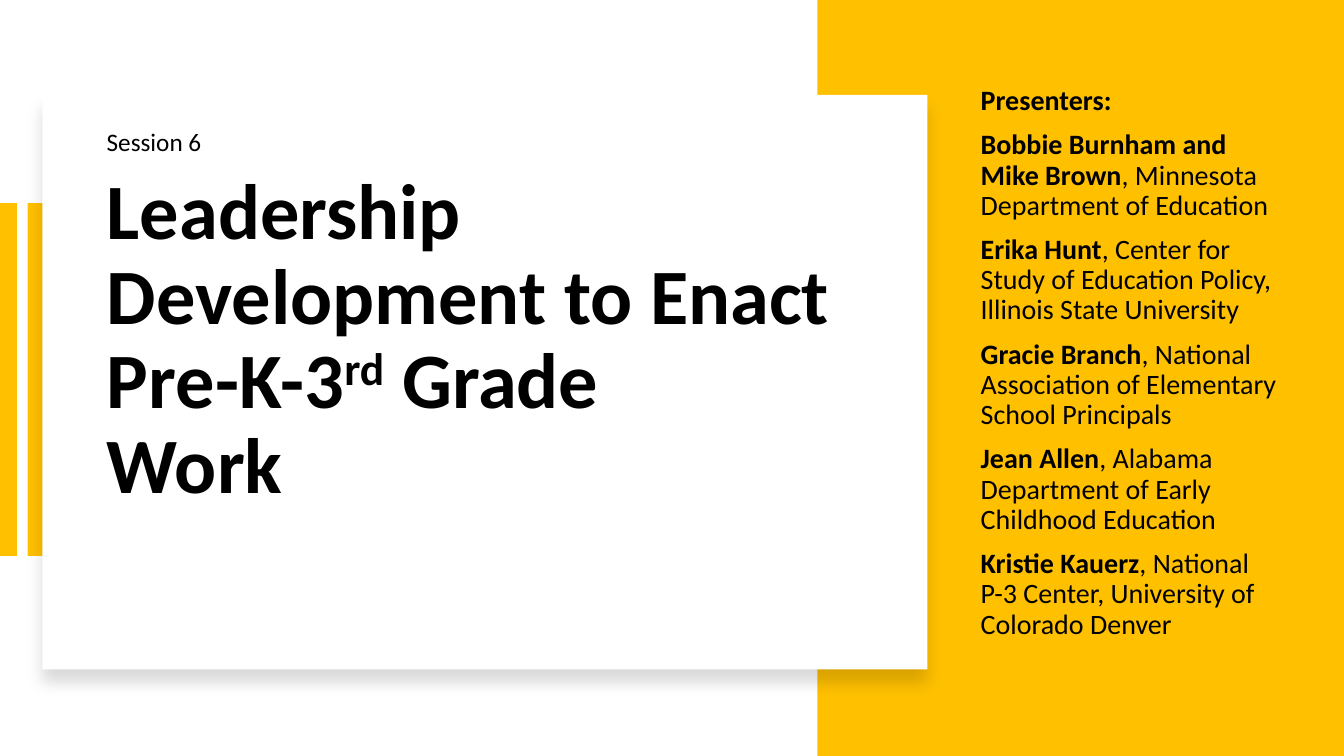
from dataclasses import dataclass

from lxml import etree
from pptx import Presentation
from pptx import util as u
from pptx.dml.color import RGBColor
from pptx.enum import text
from pptx.enum import shapes
from pptx.oxml.ns import qn


@dataclass(frozen=True)
class Theme:
    """Colours, font and type sizes of the slide."""
    accent: str = "FFC000"
    paper: str = "FFFFFF"
    ink: str = "000000"
    font: str = "Calibri"
    title_size: int = 56
    body_size: int = 20
    label_size: int = 18


class SlideBuilder:
    """Draws styled elements on one slide."""

    def __init__(self, slide, theme):
        """Keep the slide and its theme."""
        self.slide = slide
        self.theme = theme

    def apply(self, target, values):
        """Set every attribute named in values."""
        for name, value in values.items():
            setattr(target, name, value)

    def place(self, element, left, top, width, height):
        """Position an element, in centimetres, in front of the others."""
        sides = dict(left=left, top=top, width=width, height=height)
        self.apply(element, {side: u.Cm(length) for side, length in sides.items()})
        self.slide.shapes._spTree.append(element._element)

    def rectangle(self, box, colour):
        """Add a plain filled rectangle."""
        block = self.slide.shapes.add_shape(
            shapes.MSO_SHAPE.RECTANGLE, *(u.Cm(length) for length in box))
        block.fill.solid()
        block.fill.fore_color.rgb = RGBColor.from_string(colour)
        block.line.fill.background()
        block.shadow.inherit = False
        return block

    def card(self, box):
        """Add a white rectangle with a soft shadow below it."""
        panel = self.rectangle(box, self.theme.paper)
        effects = panel._element.spPr.find(qn("a:effectLst"))
        shadow = etree.SubElement(
            effects, qn("a:outerShdw"), blurRad=str(u.Pt(11)), dist=str(u.Pt(10)),
            dir="5400000", algn="t", rotWithShape="0")
        tint = etree.SubElement(shadow, qn("a:srgbClr"), val=self.theme.ink)
        etree.SubElement(tint, qn("a:alpha"), val="15000")

    def run(self, paragraph, words, size, bold=False, raised=0):
        """Add a styled run, raised by a percentage if asked."""
        piece = paragraph.add_run()
        piece.text = words
        self.apply(piece.font, dict(name=self.theme.font, size=u.Pt(size), bold=bold))
        piece.font.color.rgb = RGBColor.from_string(self.theme.ink)
        if raised:
            piece.font._element.set("baseline", str(raised * 1000))

    def frame(self, holder, bottom):
        """Centre the text vertically above a bottom inset in centimetres."""
        self.apply(holder.text_frame, dict(
            word_wrap=True, auto_size=text.MSO_AUTO_SIZE.NONE,
            vertical_anchor=text.MSO_ANCHOR.MIDDLE, margin_bottom=u.Cm(bottom)))
        return holder.text_frame

    def title(self, box, lines):
        """Fill the title placeholder with lines of (words, raised) parts."""
        heading = self.slide.shapes.title
        self.place(heading, *box)
        paragraph = self.frame(heading, 2.27).paragraphs[0]
        self.apply(paragraph, dict(alignment=text.PP_ALIGN.LEFT, line_spacing=0.9))
        for number, line in enumerate(lines):
            if number:
                paragraph.add_line_break()
            for words, raised in line:
                self.run(paragraph, words, self.theme.title_size, True, raised)

    def body(self, box, entries):
        """Fill the body placeholder with bold names and plain affiliations."""
        listing = self.slide.placeholders[1]
        self.place(listing, *box)
        content = self.frame(listing, 1.06)
        for number, (name, affiliation) in enumerate(entries):
            paragraph = content.add_paragraph() if number else content.paragraphs[0]
            self.apply(paragraph, dict(
                alignment=text.PP_ALIGN.LEFT, line_spacing=0.9, space_before=u.Pt(10)))
            properties = paragraph._p.get_or_add_pPr()
            self.apply_indent(properties)
            self.run(paragraph, name, self.theme.body_size, True)
            if affiliation:
                self.run(paragraph, f", {affiliation}", self.theme.body_size)

    def apply_indent(self, properties):
        """Remove the bullet and its hanging indent."""
        for name in ("marL", "indent"):
            properties.set(name, "0")
        etree.SubElement(properties, qn("a:buNone"))

    def label(self, box, words):
        """Add a one-line text box."""
        caption = self.slide.shapes.add_textbox(*(u.Cm(length) for length in box))
        caption.text_frame.word_wrap = False
        self.run(caption.text_frame.paragraphs[0], words, self.theme.label_size)


PRESENTERS = [
    ("Presenters:", ""),
    ("Bobbie Burnham and Mike Brown", "Minnesota Department of Education"),
    ("Erika Hunt", "Center for Study of Education Policy, Illinois State University"),
    ("Gracie Branch", "National Association of Elementary School Principals"),
    ("Jean Allen", "Alabama Department of Early Childhood Education"),
    ("Kristie Kauerz", "National P-3 Center, University of Colorado Denver"),
]
TITLE_LINES = [
    [("Leadership Development to Enact Pre-K-3", 0), ("rd", 30), (" Grade", 0)],
    [("Work", 0)],
]


def main():
    """Build the session opening slide."""
    deck = Presentation()
    deck.slide_width, deck.slide_height = u.Cm(33.87), u.Cm(19.05)
    theme = Theme()
    opening = SlideBuilder(deck.slides.add_slide(deck.slide_layouts[1]), theme)
    for stripe_left in (0, 0.7):
        opening.rectangle((stripe_left, 5.12, 0.43, 8.89), theme.accent)
    opening.rectangle((20.6, 0, 13.27, 19.05), theme.accent)
    opening.card((1.07, 2.39, 22.3, 14.48))
    opening.title((2.44, 4.09, 19.74, 11.16), TITLE_LINES)
    opening.body((24.46, 1.63, 8.33, 15.98), PRESENTERS)
    opening.label((2.44, 3.05, 2.92, 1.02), "Session 6")
    deck.save("out.pptx")


if __name__ == "__main__":
    main()
